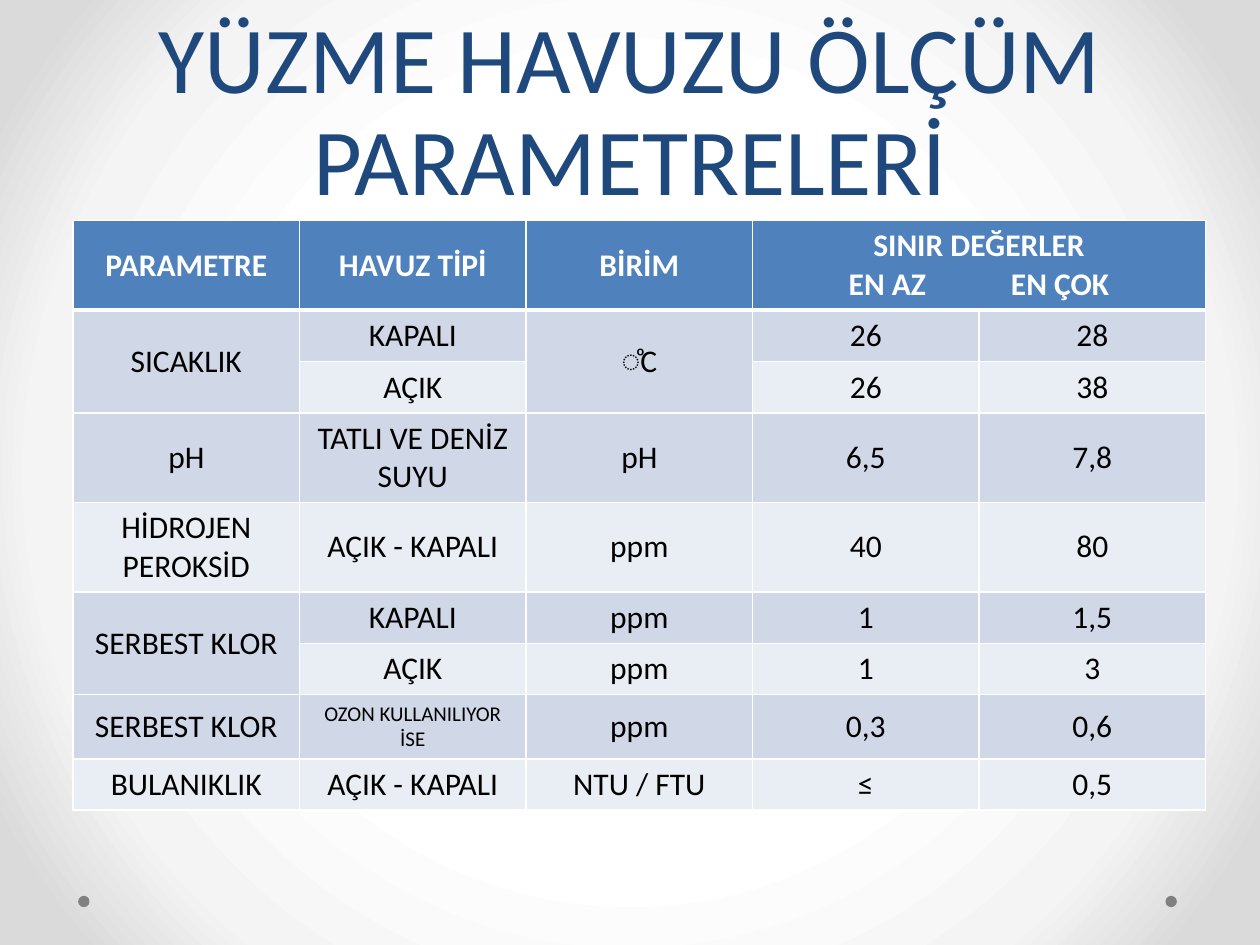
from lxml import etree
from pptx import Presentation
from pptx import util as u
from pptx.dml.color import RGBColor
from pptx.enum import shapes, text
from pptx.oxml import parse_xml
from pptx.oxml.ns import nsdecls, qn

NAVY = RGBColor(0x1F, 0x49, 0x7D)
BLUE = RGBColor(0x4F, 0x81, 0xBD)
DARK = RGBColor(0xD0, 0xD8, 0xE8)
LIGHT = RGBColor(0xE9, 0xED, 0xF4)
WHITE = RGBColor(0xFF, 0xFF, 0xFF)
BLACK = RGBColor(0, 0, 0)
GREY = RGBColor(0x80, 0x80, 0x80)
SHADES = [(50, WHITE), (76, RGBColor(0xF4, 0xF4, 0xF4)),
          (92, RGBColor(0xDA, 0xDA, 0xDA))]
FONT = "Calibri"

HEAD = ["PARAMETRE", "HAVUZ TİPİ", "BİRİM",
        "SINIR DEĞERLER\n\tEN AZ\tEN ÇOK", ""]
ROWS = [
    HEAD,
    ["SICAKLIK", "KAPALI", "ͦC", "26", "28"],
    ["", "AÇIK", "", "26", "38"],
    ["pH", "TATLI VE DENİZ SUYU", "pH", "6,5", "7,8"],
    ["HİDROJEN PEROKSİD", "AÇIK - KAPALI", "ppm", "40", "80"],
    ["SERBEST KLOR", "KAPALI", "ppm", "1", "1,5"],
    ["", "AÇIK", "ppm", "1", "3"],
    ["SERBEST KLOR", "OZON KULLANILIYOR İSE", "ppm", "0,3", "0,6"],
    ["BULANIKLIK", "AÇIK - KAPALI", "NTU / FTU", "≤", "0,5"],
]
HEIGHTS = [0.71, 0.41, 0.4, 0.71, 0.71, 0.41, 0.4, 0.51, 0.4]
SPANS = [((0, 3), (0, 4)), ((1, 0), (2, 0)), ((1, 2), (2, 2)), ((5, 0), (6, 0))]
SMALL = (7, 1)


def style(par, size, color, bold=False):
    par.alignment = text.PP_ALIGN.CENTER
    for run in par.runs:
        font = run.font
        font.name, font.size, font.bold = FONT, u.Pt(size), bold
        font.color.rgb = color


def add_back(slide):
    # Radial gradient from a white centre
    stops = "".join(f'<a:gs pos="{pos * 1000}"><a:srgbClr val="{color}"/></a:gs>'
                    for pos, color in SHADES)
    back = parse_xml(
        f'<p:bg {nsdecls("p", "a")}><p:bgPr><a:gradFill rotWithShape="1">'
        f'<a:gsLst>{stops}</a:gsLst><a:path path="circle">'
        '<a:fillToRect l="50000" t="50000" r="50000" b="50000"/></a:path>'
        '</a:gradFill><a:effectLst/></p:bgPr></p:bg>')
    slide._element.cSld.insert(0, back)


def add_dots(slide, left, top, width, size):
    # One dot at each end of the box
    for x in (left, left + width - size):
        dot = slide.shapes.add_shape(shapes.MSO_SHAPE.OVAL, x, top, size, size)
        dot.shadow.inherit = False
        dot.fill.solid()
        dot.fill.fore_color.rgb = GREY
        dot.line.fill.background()


def add_title(slide, left, top, width, height):
    title = slide.shapes.title
    title.left, title.top, title.width, title.height = left, top, width, height
    frame = title.text_frame
    frame.text = "YÜZME HAVUZU ÖLÇÜM PARAMETRELERİ"
    frame.auto_size = text.MSO_AUTO_SIZE.NONE
    frame.vertical_anchor = text.MSO_ANCHOR.BOTTOM
    par = frame.paragraphs[0]
    par.line_spacing = u.Pt(58)
    style(par, 54, NAVY)


def add_edges(cell, row):
    props = cell._tc.get_or_add_tcPr()
    for i, side in enumerate("LRTB"):
        thick = (row, side) in ((0, "B"), (1, "T"))
        edge = parse_xml(
            f'<a:ln{side} {nsdecls("a")} w="{u.Pt(3 if thick else 1)}"><a:solidFill>'
            f'<a:srgbClr val="{WHITE}"/></a:solidFill></a:ln{side}>')
        props.insert(i, edge)


def add_tabs(par, *stops):
    # Centred stops place the two sub-headings
    par.alignment = text.PP_ALIGN.LEFT
    tabs = etree.SubElement(par._p.get_or_add_pPr(), qn("a:tabLst"))
    for stop in stops:
        etree.SubElement(tabs, qn("a:tab"), pos=str(stop), algn="ctr")


def add_grid(slide, left, top, width, height):
    grid = slide.shapes.add_table(
        len(ROWS), len(HEAD), left, top, width, height).table
    for col in grid.columns:
        col.width = width // len(HEAD)
    for row, tall in zip(grid.rows, HEIGHTS):
        row.height = u.Inches(tall)
    for r, row in enumerate(ROWS):
        for c, words in enumerate(row):
            cell = grid.cell(r, c)
            add_edges(cell, r)
            cell.fill.solid()
            cell.fill.fore_color.rgb = BLUE if r == 0 else DARK if r % 2 else LIGHT
            cell.vertical_anchor = text.MSO_ANCHOR.MIDDLE
            cell.text_frame.text = words
            for par in cell.text_frame.paragraphs:
                style(par, 12 if (r, c) == SMALL else 18,
                      BLACK if r else WHITE, r == 0)
    for first, last in SPANS:
        grid.cell(*first).merge(grid.cell(*last))
    add_tabs(grid.cell(0, 3).text_frame.paragraphs[1],
             u.Inches(0.97), u.Inches(2.34))


def main():
    deck = Presentation()
    deck.slide_width, deck.slide_height = u.Inches(10), u.Inches(7.5)
    slide = deck.slides.add_slide(deck.slide_layouts[5])
    add_back(slide)
    add_dots(slide, u.Inches(0.62), u.Inches(7.11), u.Inches(8.72), u.Inches(0.09))
    add_title(slide, u.Inches(0.5), u.Inches(0), u.Inches(9), u.Inches(1.75))
    add_grid(slide, u.Inches(0.58), u.Inches(1.75), u.Inches(8.99), u.Inches(4.66))
    deck.save("out.pptx")


if __name__ == "__main__":
    main()
